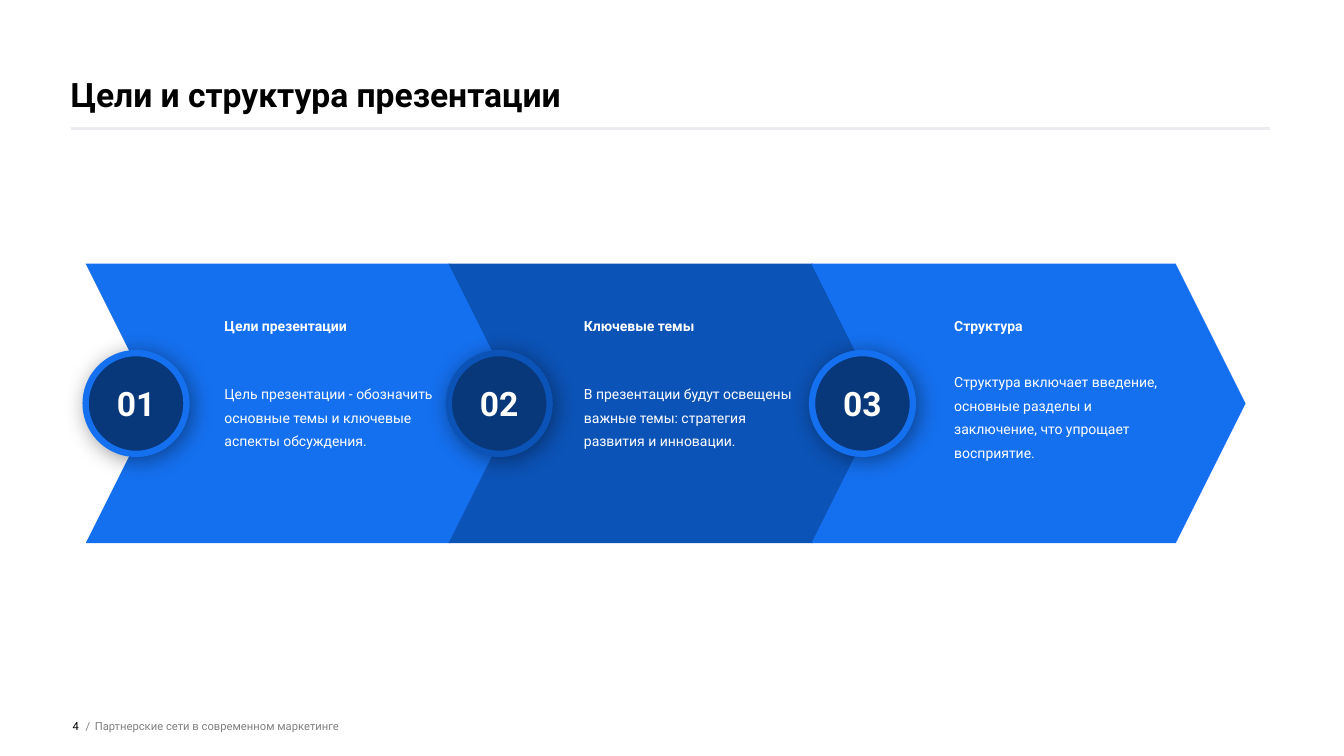
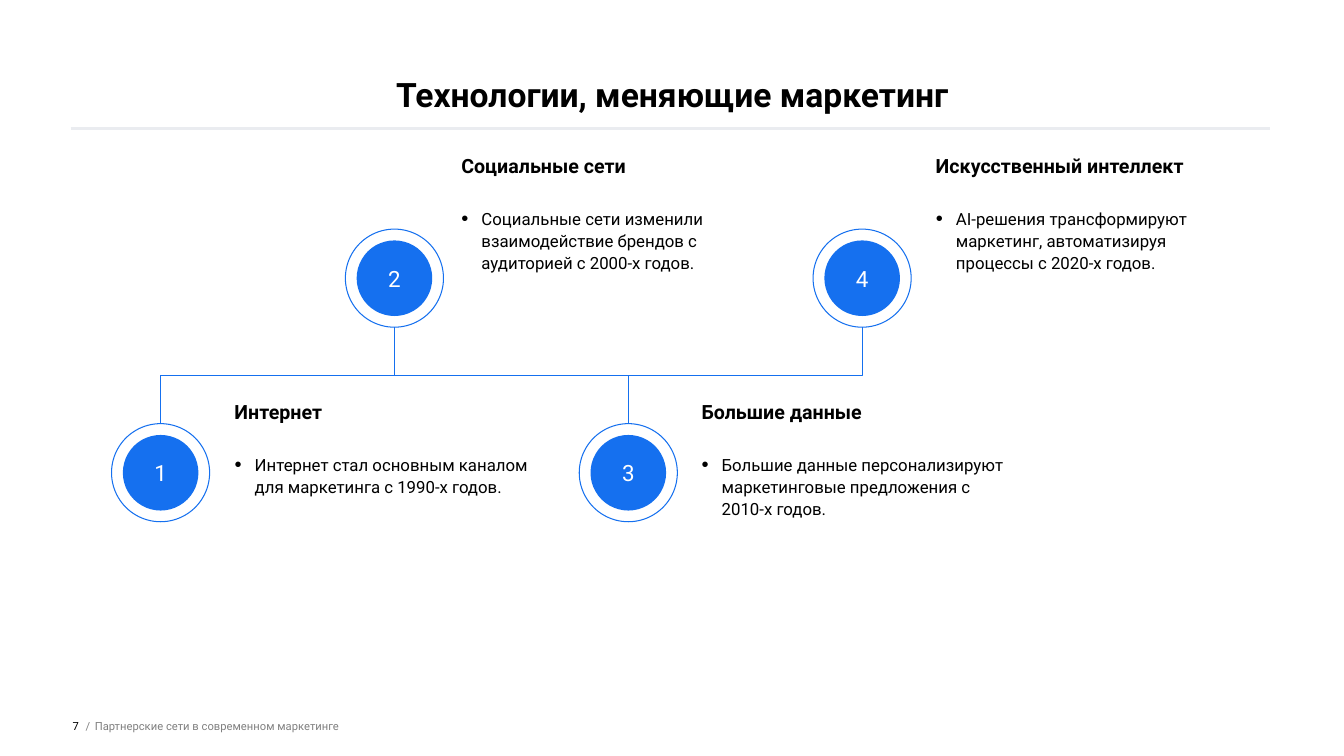
from lxml import etree
from pptx import Presentation
from pptx.dml.color import RGBColor
from pptx.enum.shapes import MSO_CONNECTOR, MSO_SHAPE as SHAPE
from pptx.enum.text import MSO_ANCHOR as ANCHOR, MSO_AUTO_SIZE, PP_ALIGN as ALIGN
from pptx.oxml import parse_xml
from pptx.oxml.ns import nsdecls, qn
from pptx.util import Emu, Inches, Pt

BLACK = RGBColor(0x00, 0x00, 0x00)
WHITE = RGBColor(0xFF, 0xFF, 0xFF)
GRAY = RGBColor(0x80, 0x80, 0x80)
RULE_GRAY = RGBColor(0xEA, 0xEC, 0xF0)
BLUE = RGBColor(0x15, 0x70, 0xEF)
DEEP_BLUE = RGBColor(0x0C, 0x53, 0xB7)
NAVY = RGBColor(0x08, 0x38, 0x7A)
FONT = "Roboto"
FOOTER = "Партнерские сети в современном маркетинге"

# Square grid: 40 columns by 22.5 rows
prs = Presentation()
prs.slide_width, prs.slide_height = Inches(40 / 3), Inches(7.5)
CELL = prs.slide_width / 40


def cells(*counts):
    return [Emu(round(count * CELL)) for count in counts]


def write(shape, text, size=12, color=BLACK, bold=False, align=ALIGN.LEFT,
          anchor=ANCHOR.MIDDLE, spacing=1.0, bullet=False):
    frame = shape.text_frame
    frame.word_wrap = True
    frame.auto_size = MSO_AUTO_SIZE.NONE
    frame.vertical_anchor = anchor
    frame.margin_left = frame.margin_right = frame.margin_top = frame.margin_bottom = 0
    paragraph = frame.paragraphs[0]
    paragraph.alignment = align
    paragraph.line_spacing = spacing
    paragraph.space_before = paragraph.space_after = Pt(0)
    run = paragraph.add_run()
    run.text = text
    run.font.name, run.font.size, run.font.bold = FONT, Pt(size), bold
    run.font.color.rgb = color
    if bullet:
        props = paragraph._p.get_or_add_pPr()
        props.set("marL", str(Inches(0.2)))
        props.set("indent", str(-Inches(0.2)))
        etree.SubElement(props, qn("a:buSzPct"), val="120000")
        etree.SubElement(props, qn("a:buFont"), typeface="Arial")
        etree.SubElement(props, qn("a:buChar"), char="•")


# Shared title, rule and footer
TITLE_ONLY, COMPARISON = prs.slide_layouts[5], prs.slide_layouts[4]
pages = [
    (TITLE_ONLY, "Цели и структура презентации", ALIGN.LEFT, "4"),
    (COMPARISON, "Технологии, меняющие маркетинг", ALIGN.CENTER, "7"),
]
for layout, heading, align, number in pages:
    slide = prs.slides.add_slide(layout)
    title = slide.shapes.title
    title.left, title.top, title.width, title.height = cells(2.1, 0, 35.82, 3.39)
    write(title, heading, size=24, bold=True, align=align, anchor=ANCHOR.BOTTOM)
    rule = slide.shapes.add_connector(
        MSO_CONNECTOR.STRAIGHT, *cells(2.1, 3.82, 37.8, 3.82))
    rule.line.color.rgb, rule.line.width = RULE_GRAY, Pt(2)
    etree.SubElement(rule._element.spPr, qn("a:effectLst"))
    for left, width, text, color, side in [
        (1.42, 0.93, number, BLACK, ALIGN.RIGHT),
        (2.55, 0.27, "/", GRAY, ALIGN.LEFT),
        (2.82, 25.83, FOOTER, GRAY, ALIGN.LEFT),
    ]:
        part = slide.shapes.add_textbox(*cells(left, 20.7, width, 1.8))
        write(part, text, size=8, color=color, align=side)

goals, timeline = prs.slides

# Goals: three chevrons, each with a numbered badge
FIRST_LEFT, CHEVRON_STEP, BADGE_STEP = 2.55, 10.8, 10.81
stages = [
    (BLUE, 6.68, "Цели презентации",
     "Цель презентации - обозначить основные темы и ключевые аспекты обсуждения."),
    (DEEP_BLUE, 17.38, "Ключевые темы",
     "В презентации будут освещены важные темы: стратегия развития и инновации."),
    (BLUE, 28.4, "Структура",
     "Структура включает введение, основные разделы и заключение, что упрощает восприятие."),
]
for i, (color, *_) in enumerate(stages):
    chevron = goals.shapes.add_shape(
        SHAPE.CHEVRON, *cells(FIRST_LEFT + i * CHEVRON_STEP, 7.85, 12.92, 8.32))
    chevron.adjustments[0] = 0.25
    chevron.shadow.inherit = False
    chevron.fill.solid()
    chevron.fill.fore_color.rgb = color
    chevron.line.fill.background()

for i, (color, text_left, heading, body) in enumerate(stages):
    badge = goals.shapes.add_shape(
        SHAPE.OVAL, *cells(FIRST_LEFT + i * BADGE_STEP, 10.51, 3, 3))
    badge.fill.solid()
    badge.fill.fore_color.rgb = NAVY
    badge.line.color.rgb, badge.line.width = color, Pt(4.5)
    badge._element.spPr.append(parse_xml(
        f'<a:effectLst {nsdecls("a")}><a:outerShdw blurRad="{Pt(15.8)}" dist="{Pt(3)}" '
        'dir="2700000" algn="ctr" rotWithShape="0"><a:srgbClr val="000000">'
        '<a:alpha val="40000"/></a:srgbClr></a:outerShdw></a:effectLst>'))
    write(badge, f"{i + 1:02}", size=24, color=WHITE, bold=True, align=ALIGN.CENTER)
    label = goals.shapes.add_textbox(*cells(text_left, 8.6, 6.33, 1.35))
    write(label, heading, size=10, color=WHITE, bold=True, anchor=ANCHOR.BOTTOM)
    detail = goals.shapes.add_textbox(*cells(text_left, 10.14, 6.33, 4.38))
    write(detail, body, size=10, color=WHITE, spacing=1.4)

# Timeline: numbered discs alternating below and above
FIRST_CENTER, STEP = 4.78, 6.96
DISC, RING = 2.25, 2.92
LOWER, UPPER = (14.07, 11.98), (8.28, 4.65)  # disc centre, heading top
milestones = [
    (LOWER, 6.98, "Интернет",
     "Интернет стал основным каналом для маркетинга с 1990-х годов."),
    (UPPER, 13.73, "Социальные сети",
     "Социальные сети изменили взаимодействие брендов с аудиторией с 2000-х годов."),
    (LOWER, 20.88, "Большие данные",
     "Большие данные персонализируют маркетинговые предложения с 2010-х годов."),
    (UPPER, 27.85, "Искусственный интеллект",
     "AI-решения трансформируют маркетинг, автоматизируя процессы с 2020-х годов."),
]
ring_edges = []
bodies = list(timeline.placeholders)[1:]
for i, (body, (row, text_left, heading, text)) in enumerate(zip(bodies, milestones)):
    center_x = FIRST_CENTER + i * STEP
    center_y, text_top = row
    disc, ring = [
        timeline.shapes.add_shape(
            SHAPE.OVAL, *cells(center_x - size / 2, center_y - size / 2, size, size))
        for size in (DISC, RING)]
    disc.shadow.inherit = ring.shadow.inherit = False
    disc.fill.solid()
    disc.fill.fore_color.rgb = BLUE
    disc.line.fill.background()
    ring.fill.background()
    ring.line.color.rgb, ring.line.width = BLUE, Pt(0.75)
    write(disc, str(i + 1), size=16, color=WHITE, align=ALIGN.CENTER)
    ring_edges.append((center_x, center_y + (RING / 2 if row is UPPER else -RING / 2)))
    label = timeline.shapes.add_textbox(*cells(text_left, text_top, 9.3, 1.2))
    write(label, heading, size=14, bold=True, anchor=ANCHOR.TOP, spacing=0.9)
    body.left, body.top, body.width, body.height = cells(
        text_left, text_top + 1.5, 9.3, 4.5)
    write(body, text, anchor=ANCHOR.TOP, spacing=1.1, bullet=True)

# Stepped links between neighbouring rings
for (x1, y1), (x2, y2) in zip(ring_edges, ring_edges[1:]):
    middle = (y1 + y2) / 2
    outline = timeline.shapes.build_freeform(*cells(x1, y1))
    outline.add_line_segments(
        [cells(x1, middle), cells(x2, middle), cells(x2, y2)], close=False)
    link = outline.convert_to_shape()
    link.shadow.inherit = False
    link.fill.background()
    link.line.color.rgb, link.line.width = BLUE, Pt(0.75)

prs.save("out.pptx")
